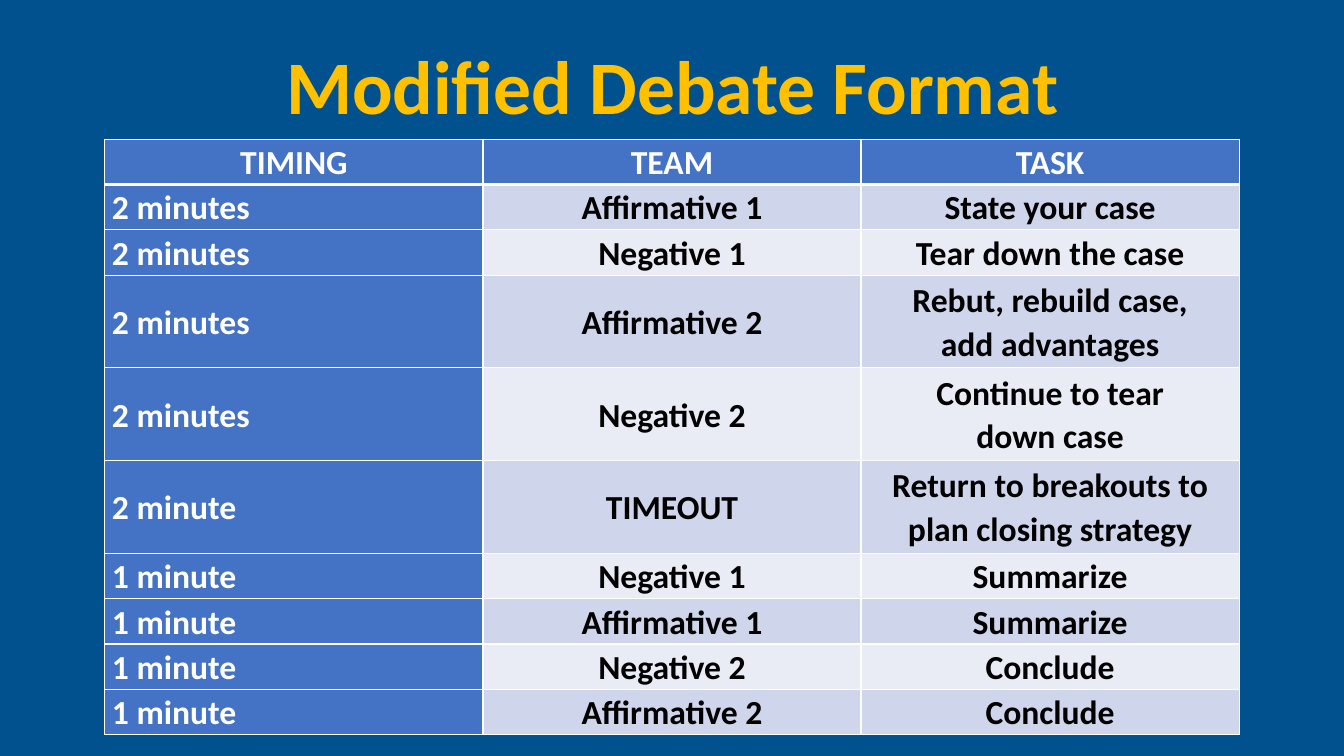
from dataclasses import dataclass

from pptx import Presentation
from pptx.dml.color import RGBColor
from pptx.enum.text import MSO_ANCHOR as Anchor, PP_ALIGN as Align
from pptx.oxml import parse_xml
from pptx.oxml.ns import nsdecls
from pptx.util import Inches, Pt


@dataclass(frozen=True)
class Theme:
    font: str = "Calibri"
    title_size: int = 54
    table_size: int = 24
    background: str = "00518E"
    title: str = "FFC000"
    accent: str = "4472C4"
    light: str = "FFFFFF"
    dark: str = "000000"
    bands: tuple = ("CFD5EA", "E9EBF5")


HEADINGS = ("TIMING", "TEAM", "TASK")
ROUNDS = (
    ("2 minutes", "Affirmative 1", "State your case"),
    ("2 minutes", "Negative 1", "Tear down the case"),
    ("2 minutes", "Affirmative 2", "Rebut, rebuild case,\vadd advantages"),
    ("2 minutes", "Negative 2", "Continue to tear\vdown case"),
    ("2 minute", "TIMEOUT", "Return to breakouts to plan closing strategy"),
    ("1 minute", "Negative 1", "Summarize"),
    ("1 minute", "Affirmative 1", "Summarize"),
    ("1 minute", "Negative 2", "Conclude"),
    ("1 minute", "Affirmative 2", "Conclude"),
)
SINGLE_ROW, DOUBLE_ROW = 0.45, 0.92
ROW_HEIGHTS = [SINGLE_ROW] * 3 + [DOUBLE_ROW] * 3 + [SINGLE_ROW] * 4
COLUMN_WIDTH = 3.75


class SlideBuilder:
    def __init__(self, slide, theme):
        self.slide = slide
        self.theme = theme
        fill = slide.background.fill
        fill.solid()
        fill.fore_color.rgb = RGBColor.from_string(theme.background)

    def set_text(self, frame, text, size, color, align, spacing):
        frame.text = text
        para = frame.paragraphs[0]
        para.alignment = align
        para.line_spacing = spacing
        for span in para.runs:
            span.font.name = self.theme.font
            span.font.size = Pt(size)
            span.font.bold = True
            span.font.color.rgb = RGBColor.from_string(color)

    def title(self, text, left, top, width, height):
        box = self.slide.shapes.add_textbox(
            Inches(left), Inches(top), Inches(width), Inches(height))
        frame = box.text_frame
        frame.word_wrap = True
        frame.vertical_anchor = Anchor.MIDDLE
        self.set_text(frame, text, self.theme.title_size, self.theme.title, Align.CENTER, 0.9)

    def border(self, cell, side, points):
        """Add one cell edge; side is L, R, T or B, called in that order."""
        cell._tc.get_or_add_tcPr().append(parse_xml(
            f'<a:ln{side} {nsdecls("a")} w="{Pt(points)}"><a:solidFill>'
            f'<a:srgbClr val="{self.theme.light}"/></a:solidFill></a:ln{side}>'))

    def cell(self, cell, text, row, column):
        theme = self.theme
        accented = row == 0 or column == 0
        cell.margin_left = cell.margin_right = Inches(0.07)
        cell.margin_top = cell.margin_bottom = 0
        cell.vertical_anchor = Anchor.MIDDLE
        for side in "LRTB":
            heavy = (row, side) in ((0, "B"), (1, "T"))
            self.border(cell, side, 3 if heavy else 1)
        cell.fill.solid()
        cell.fill.fore_color.rgb = RGBColor.from_string(
            theme.accent if accented else theme.bands[(row - 1) % 2])
        self.set_text(cell.text_frame, text, theme.table_size,
                      theme.light if accented else theme.dark,
                      Align.LEFT if row and column == 0 else Align.CENTER, 1.07)

    def table(self, rows, left, top, column_width, row_heights):
        columns = len(rows[0])
        table = self.slide.shapes.add_table(
            len(rows), columns, Inches(left), Inches(top),
            Inches(column_width * columns), Inches(sum(row_heights))).table
        for column in table.columns:
            column.width = Inches(column_width)
        for row, (texts, height) in enumerate(zip(rows, row_heights)):
            table.rows[row].height = Inches(height)
            for column, text in enumerate(texts):
                self.cell(table.cell(row, column), text, row, column)


def main():
    deck = Presentation()
    deck.slide_width, deck.slide_height = Inches(13.33), Inches(7.5)
    page = SlideBuilder(deck.slides.add_slide(deck.slide_layouts[6]), Theme())
    page.title("Modified Debate Format", 0.92, 0.4, 11.5, 0.98)
    page.table((HEADINGS, *ROUNDS), 1.04, 1.38, COLUMN_WIDTH, ROW_HEIGHTS)
    deck.save("out.pptx")


if __name__ == "__main__":
    main()
